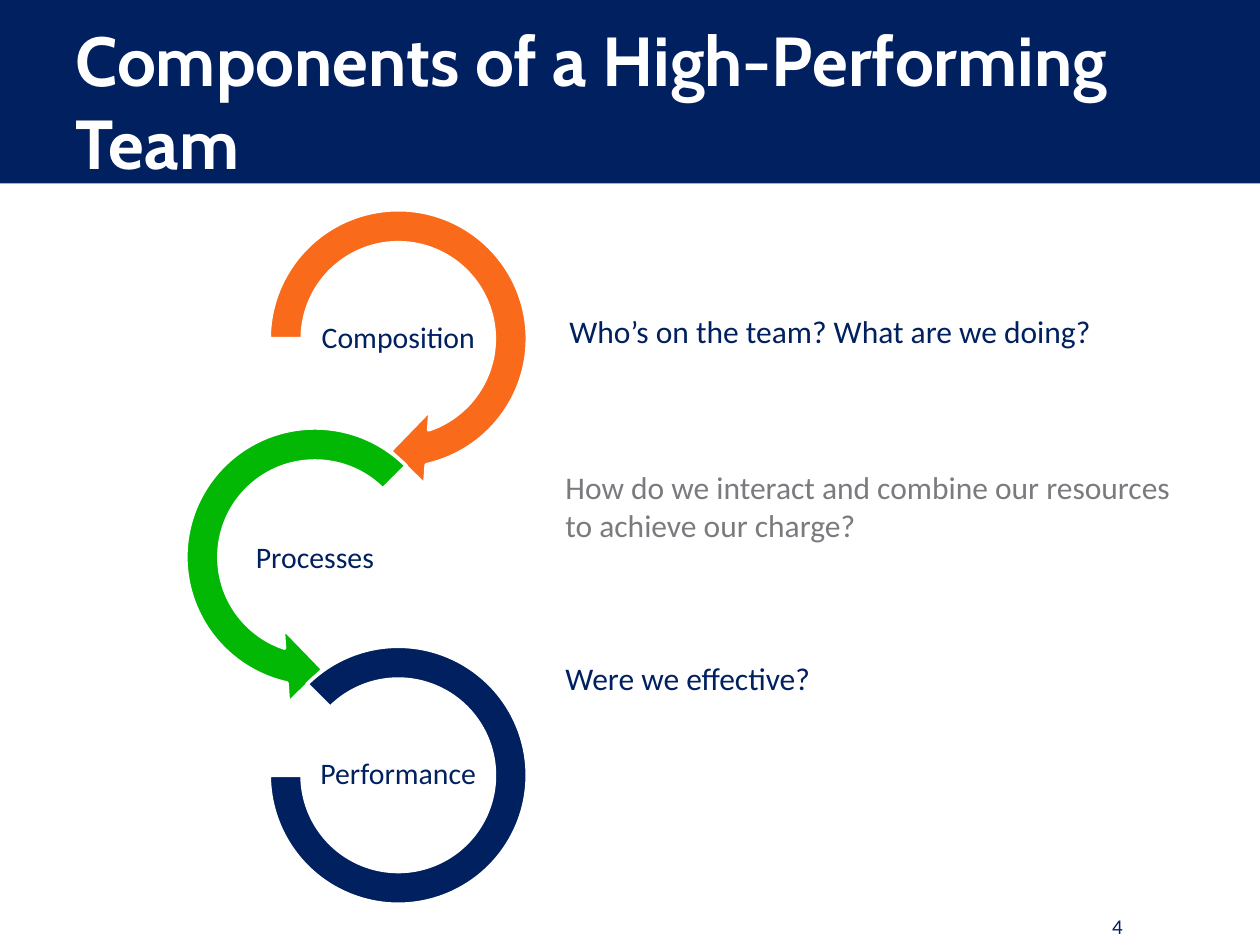
from pptx import Presentation
from pptx.dml.color import RGBColor
from pptx.enum.shapes import MSO_SHAPE
from pptx.enum.text import MSO_ANCHOR, MSO_AUTO_SIZE, PP_ALIGN
from pptx.util import Cm, Pt

NAVY = RGBColor(0x00, 0x20, 0x60)
ORANGE = RGBColor(0xF9, 0x6A, 0x1B)
GREEN = RGBColor(0x02, 0xB8, 0x04)
GRAY = RGBColor(0x79, 0x7B, 0x7E)
WHITE = RGBColor(0xFF, 0xFF, 0xFF)

# Content
TITLE = "Components of a High-Performing Team"
PAGE = "4"
# Label, ring shape, adjustments, colour, ring centre x, ring size (cm)
RINGS = [
    ("Composition", MSO_SHAPE.CIRCULAR_ARROW,
     (0.11, 11.42, 45, 108, 0.125), ORANGE, 8.03, 6.05),
    ("Processes", MSO_SHAPE.LEFT_CIRCULAR_ARROW,
     (0.11, 11.42, 63, 189, 0.125), GREEN, 6.35, 6.05),
    ("Performance", MSO_SHAPE.BLOCK_ARC,
     (135, 108, 0.127), NAVY, 8.03, 5.2),
]
# Question, colour, left, top, width, height (cm)
ASKS = [
    ("Who’s on the team? What are we doing?", NAVY, 11.23, 6.17, 12.07, 1.03),
    ("How do we interact and combine our resources to achieve our charge?",
     GRAY, 11.15, 9.32, 12.98, 1.8),
    ("Were we effective?", NAVY, 11.15, 13.16, 5.51, 1.03),
]
TOP, STEP = 6.83, 4.38  # first ring centre and distance to the next
LABEL_W, LABEL_H = 3.35, 1.68
LABEL_DROP = (0, 0.04, 0)


def style(para, text, size, color, align=PP_ALIGN.LEFT, face="Calibri"):
    para.text = text
    para.alignment = align
    para.font.size = Pt(size)
    para.font.name = face
    para.font.color.rgb = color


def add_text(slide, box, text, size, color, align=PP_ALIGN.LEFT,
             anchor=MSO_ANCHOR.TOP, inset=None):
    frame = slide.shapes.add_textbox(*map(Cm, box)).text_frame
    frame.word_wrap = True
    frame.vertical_anchor = anchor
    if inset is not None:
        frame.margin_left = frame.margin_right = Cm(inset)
        frame.margin_top = frame.margin_bottom = Cm(inset)
    style(frame.paragraphs[0], text, size, color, align)
    return frame


def add_shape(slide, kind, box, color):
    shape = slide.shapes.add_shape(kind, *map(Cm, box))
    shape.shadow.inherit = False
    shape.fill.solid()
    shape.fill.fore_color.rgb = color
    return shape


deck = Presentation()
deck.slide_width, deck.slide_height = Cm(25.4), Cm(19.05)
slide = deck.slides.add_slide(deck.slide_layouts[5])

# Title band, sent behind the title
band = add_shape(slide, MSO_SHAPE.RECTANGLE, (0, 0, 25.4, 3.7), NAVY)
band.line.fill.background()
slide.shapes.element.insert(2, band.element)

# Title
title = slide.shapes.title
title.left, title.top, title.width, title.height = map(
    Cm, (1.27, 0.43, 22.86, 3.18))
frame = title.text_frame
frame.word_wrap = True
frame.auto_size = MSO_AUTO_SIZE.NONE
frame.vertical_anchor = MSO_ANCHOR.MIDDLE
style(frame.paragraphs[0], TITLE, 39.6, WHITE, face="Cabin")
frame.paragraphs[0].font.bold = True

# Chain of rings with labels
for row, (label, kind, values, color, mid, size) in enumerate(RINGS):
    y = TOP + row * STEP
    ring = add_shape(slide, kind, (mid - size / 2, y - size / 2 + row * 0.02,
                                   size, size), color)
    ring.line.color.rgb = WHITE
    ring.line.width = Pt(2)
    for i, value in enumerate(values):
        ring.adjustments[i] = value
    box = (mid - LABEL_W / 2, y - LABEL_H / 2 + LABEL_DROP[row] + row * 0.02,
           LABEL_W, LABEL_H)
    frame = add_text(slide, box, label, 17, NAVY, PP_ALIGN.CENTER,
                     MSO_ANCHOR.MIDDLE, 0.03)
    frame.paragraphs[0].line_spacing = 0.9

# Questions
for text, color, *box in ASKS:
    frame = add_text(slide, box, text, 18, color)
    frame.auto_size = MSO_AUTO_SIZE.SHAPE_TO_FIT_TEXT

# Page number
add_text(slide, (21.79, 18.29, 1.47, 0.76), PAGE, 12, NAVY,
         PP_ALIGN.CENTER, MSO_ANCHOR.MIDDLE)

deck.save("out.pptx")
